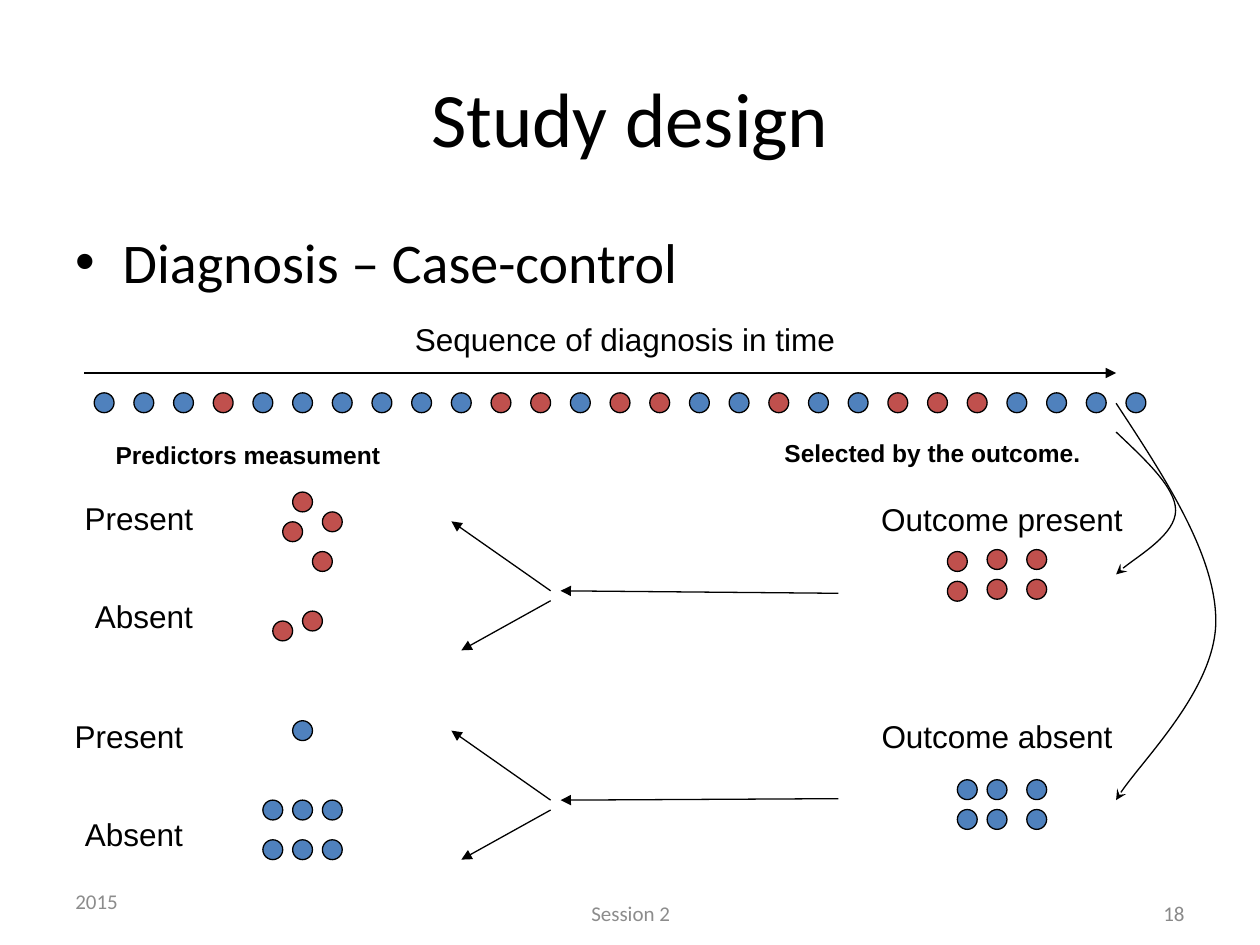
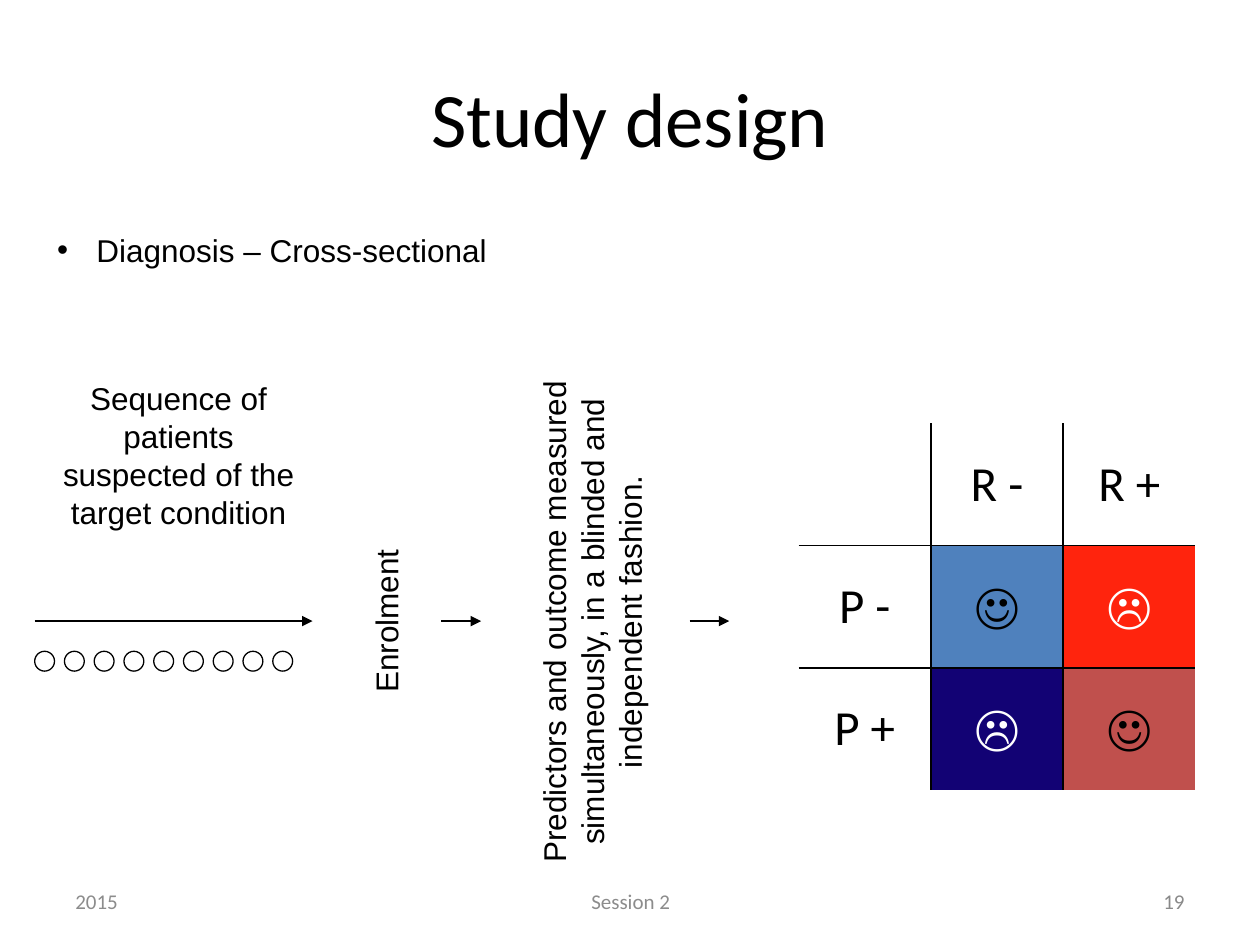
import pptx
import pptx.util
import pptx.dml.color
import pptx.enum.shapes
import pptx.enum.text
import pptx.oxml
import pptx.oxml.ns
from pptx.util import Cm

BLACK, WHITE = "000000", "FFFFFF"
BLUE, RED = "4F81BD", "C0504D"
FALSE_RED, FALSE_BLUE = "FF240D", "120274"
FOOTER_GREY, NUMBER_GREY = "8C8C8C", "898989"
HEADING_FONT, LABEL_FONT = "Calibri", "Arial"
DOT_SIZE = 0.4
ALIGN = pptx.enum.text.PP_ALIGN
MIDDLE = pptx.enum.text.MSO_ANCHOR.MIDDLE
A_NS = 'xmlns:a="http://schemas.openxmlformats.org/drawingml/2006/main"'
qn = pptx.oxml.ns.qn


def color(hex_code):
    return pptx.dml.color.RGBColor.from_string(hex_code)


def xml(markup):
    head, sep, rest = markup.partition(" ")
    return pptx.oxml.parse_xml(f"{head} {A_NS} {rest}")


def add_run(paragraph, text, size, font, hex_code=BLACK, bold=False):
    run = paragraph.add_run()
    run.text = text
    run.font.size = pptx.util.Pt(size)
    run.font.name = font
    run.font.bold = bold
    run.font.color.rgb = color(hex_code)


def place(shape, left, top, width, height):
    shape.left, shape.top = Cm(left), Cm(top)
    shape.width, shape.height = Cm(width), Cm(height)


def add_label(slide, text, left, top, width, height=1.02, size=18, font=LABEL_FONT,
              hex_code=BLACK, bold=False, align=ALIGN.CENTER, anchor=None, rotation=0):
    label = slide.shapes.add_textbox(Cm(left), Cm(top), Cm(width), Cm(height))
    label.rotation = rotation
    frame = label.text_frame
    frame.word_wrap = True
    frame.vertical_anchor = anchor
    frame.paragraphs[0].alignment = align
    add_run(frame.paragraphs[0], text, size, font, hex_code, bold)


def style_line(shape, arrowhead=None):
    shape.line.color.rgb = color(BLACK)
    shape.line.width = pptx.util.Pt(0.75)
    if arrowhead:
        shape.line._get_or_add_ln().append(xml(f'<a:tailEnd type="{arrowhead}"/>'))


def add_arrow(slide, start, end):
    ends = [Cm(value) for value in (*start, *end)]
    arrow = slide.shapes.add_connector(pptx.enum.shapes.MSO_CONNECTOR.STRAIGHT, *ends)
    style_line(arrow, "triangle")
    arrow._element.spPr.append(xml("<a:effectLst />"))


def add_curve(slide, start, controls):
    points = [(Cm(x), Cm(y)) for x, y in controls]
    builder = slide.shapes.build_freeform(Cm(start[0]), Cm(start[1]))
    builder.add_line_segments(points, close=False)
    curve = builder.convert_to_shape()
    curve.shadow.inherit = False
    curve.fill.background()
    style_line(curve, "stealth")
    segments = list(curve._element.iter(qn("a:lnTo")))
    for first in range(0, len(segments), 3):
        bezier = xml("<a:cubicBezTo />")
        segments[first].addprevious(bezier)
        for segment in segments[first:first + 3]:
            bezier.append(segment[0])
            segment.getparent().remove(segment)


def add_patients(slide, positions, hex_code=None):
    for x, y in positions:
        patient = slide.shapes.add_shape(pptx.enum.shapes.MSO_SHAPE.OVAL,
                                         Cm(x), Cm(y), Cm(DOT_SIZE), Cm(DOT_SIZE))
        patient.shadow.inherit = False
        style_line(patient)
        if hex_code:
            patient.fill.solid()
            patient.fill.fore_color.rgb = color(hex_code)
        else:
            patient.fill.background()


def grid(columns, rows):
    return [(x, y) for y in rows for x in columns]


def add_design_slide(deck, topic, topic_box, topic_size, topic_font, indent,
                     number, date_top, footer_top):
    slide = deck.slides.add_slide(deck.slide_layouts[1])
    title = slide.shapes.title
    place(title, 1.27, 0.76, 22.86, 3.18)
    title.text_frame.vertical_anchor = MIDDLE
    title.text_frame.paragraphs[0].alignment = ALIGN.CENTER
    add_run(title.text_frame.paragraphs[0], "Study design", 44, HEADING_FONT)

    body = slide.placeholders[1]
    place(body, *topic_box)
    body.text_frame.auto_size = pptx.enum.text.MSO_AUTO_SIZE.NONE
    item = body.text_frame.paragraphs[0]
    item.space_before = pptx.util.Pt(0)
    properties = item._p.get_or_add_pPr()
    properties.set("marL", str(Cm(indent)))
    properties.set("indent", str(-Cm(indent)))
    properties.append(xml('<a:buFont typeface="Arial"/>'))
    properties.append(xml('<a:buChar char="•"/>'))
    add_run(item, topic, topic_size, topic_font)

    for text, left, top, width, hex_code, align in (
        ("2015", 1.27, date_top, 5.93, FOOTER_GREY, ALIGN.LEFT),
        ("Session 2", 8.69, footer_top, 8.05, FOOTER_GREY, ALIGN.CENTER),
        (number, 18.2, footer_top, 5.93, NUMBER_GREY, ALIGN.RIGHT),
    ):
        add_label(slide, text, left, top, width, size=12, font=HEADING_FONT,
                  hex_code=hex_code, align=align, anchor=MIDDLE)
    return slide


def set_borders(cell, visible):
    properties = cell._tc.get_or_add_tcPr()
    for index, (side, shown) in enumerate(visible.items()):
        fill = f'<a:solidFill><a:srgbClr val="{BLACK}"/></a:solidFill>' if shown else "<a:noFill/>"
        properties.insert(index, xml(f'<a:ln{side} w="12700">{fill}</a:ln{side}>'))


def add_accuracy_table(slide):
    rows = (
        (("", None, BLACK), ("R -", None, BLACK), ("R +", None, BLACK)),
        (("P -", None, BLACK), ("☺", BLUE, BLACK), ("☹", FALSE_RED, WHITE)),
        (("P +", None, BLACK), ("☹", FALSE_BLUE, WHITE), ("☺", RED, BLACK)),
    )
    table = slide.shapes.add_table(3, 3, Cm(16.1), Cm(8.53), Cm(8), Cm(7.4)).table
    table.first_row = table.horz_banding = False
    for r, row in enumerate(rows):
        for c, (text, fill, ink) in enumerate(row):
            cell = table.cell(r, c)
            cell.vertical_anchor = MIDDLE
            if fill:
                cell.fill.solid()
                cell.fill.fore_color.rgb = color(fill)
            else:
                cell.fill.background()
            set_borders(cell, {"L": c > 0, "R": c < 2, "T": r > 0, "B": r < 2})
            if text:
                paragraph = cell.text_frame.paragraphs[0]
                paragraph.alignment = ALIGN.CENTER
                add_run(paragraph, text, 28, HEADING_FONT, ink)


def add_case_control(deck):
    slide = add_design_slide(deck, "Diagnosis – Case-control", (1.27, 4.45, 22.86, 1.68),
                             32, HEADING_FONT, 0.95, "18", 17.65, 17.9)
    add_label(slide, "Sequence of diagnosis in time", 4.7, 6.32, 15.8)
    add_arrow(slide, (1.7, 7.52), (22.5, 7.52))
    diagnoses = "BBBRBBBBBBRRBRRBBRBBRRRBBBB"
    for code, hex_code in (("B", BLUE), ("R", RED)):
        add_patients(slide, [(1.9 + 0.8 * i, 7.92) for i, diagnosis in enumerate(diagnoses)
                             if diagnosis == code], hex_code)

    add_label(slide, "Predictors measument", 1.1, 8.74, 7.8, 0.84, 14, bold=True)
    add_label(slide, "Selected by the outcome.", 14.4, 8.71, 8.8, 0.86, 14, bold=True)
    add_label(slide, "Outcome present", 17.1, 9.96, 6.2)
    add_label(slide, "Outcome absent", 16.5, 14.33, 7.2)
    for left, top in ((1.3, 9.93), (1.1, 14.33)):
        add_label(slide, "Present", left, top, 3)
        add_label(slide, "Absent", left, top + 1.98, 3.2)

    add_curve(slide, (22.5, 8.71), [(23.09, 9.27), (23.7, 9.83), (23.7, 10.29),
                                    (23.7, 10.77), (22.71, 11.35), (22.5, 11.58)])
    add_curve(slide, (22.5, 8.13), [(23.5, 9.65), (24.51, 11.2), (24.51, 12.52),
                                    (24.51, 13.87), (22.83, 15.52), (22.5, 16.13)])
    for outcome_y, split_y in ((11.96, 11.91), (16.1, 16.13)):
        add_arrow(slide, (16.9, outcome_y), (11.3, split_y))
        add_arrow(slide, (11.1, split_y), (9.1, split_y - 1.4))
        add_arrow(slide, (11.1, split_y + 0.2), (9.3, split_y + 1.2))

    cases = grid([19.1], [11.12, 11.72]) + grid([19.9, 20.7], [11.08, 11.68])
    exposed_cases = [(5.9, 9.92), (5.7, 10.52), (6.3, 11.12), (6.5, 10.32)]
    unexposed_cases = [(6.1, 12.32), (5.5, 12.52)]
    add_patients(slide, cases + exposed_cases + unexposed_cases, RED)
    controls = grid([19.3, 19.9, 20.7], [15.72, 16.32])
    exposed_controls = [(5.9, 14.53)]
    unexposed_controls = grid([5.3, 5.9, 6.5], [16.13, 16.93])
    add_patients(slide, controls + exposed_controls + unexposed_controls, BLUE)


def add_cross_sectional(deck):
    slide = add_design_slide(deck, "Diagnosis – Cross-sectional", (0.9, 4.52, 13.8, 1.02),
                             18, LABEL_FONT, 0.79, "19", 17.65, 17.65)
    add_label(slide, "Sequence of patients suspected of the target condition",
              0.9, 7.52, 5.4, 3.33)
    add_label(slide, "Enrolment", 5.18, 12.01, 5.2, rotation=270)
    add_label(slide, "Predictors and outcome measured simultaneously, "
              "in a blinded and independent fashion.", 5.94, 11.25, 12, 2.57, rotation=270)
    for start_x, end_x in ((0.7, 6.3), (8.9, 9.7), (13.9, 14.7)):
        add_arrow(slide, (start_x, 12.52), (end_x, 12.52))
    add_patients(slide, [(0.7 + 0.6 * i, 13.13) for i in range(9)])
    add_accuracy_table(slide)


def main():
    deck = pptx.Presentation()
    deck.slide_width, deck.slide_height = Cm(25.4), Cm(19.05)
    add_case_control(deck)
    add_cross_sectional(deck)
    deck.save("out.pptx")


if __name__ == "__main__":
    main()
